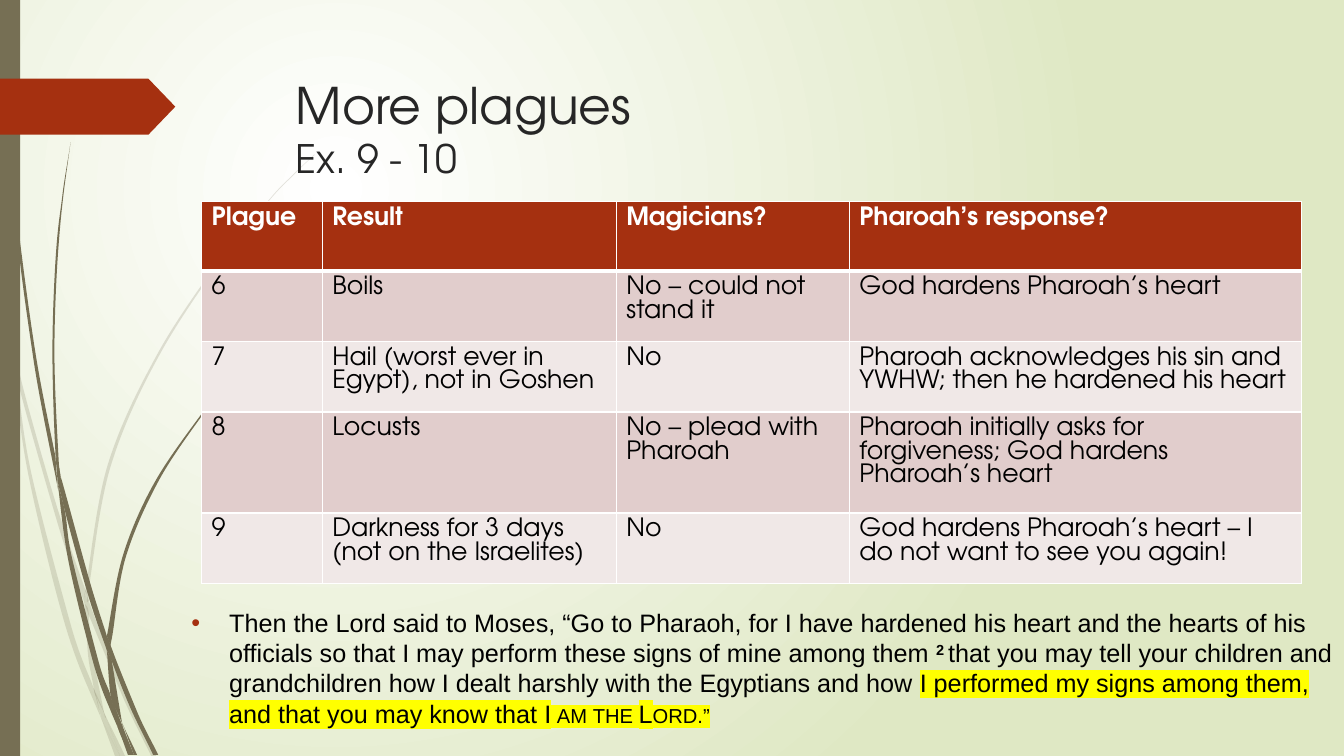
from lxml import etree
from pptx import Presentation
from pptx.dml.color import RGBColor
from pptx.enum.shapes import MSO_SHAPE
from pptx.oxml.ns import qn
from pptx.util import Pt

RECT, TAG = MSO_SHAPE.RECTANGLE, MSO_SHAPE.PENTAGON
COLOR = {"stem": "766F54", "red": "A53010", "title": "262626", "black": "000000",
         "white": "FFFFFF", "green": "DFE8C4", "dark": "E1CDCC", "pale": "F0E8E7",
         "mark": "FFFF00"}
HEAD_FONT, BODY_FONT = "TeX Gyre Adventor", "Arial"

TITLE = [("More plagues", 36), ("Ex. 9 - 10", 28)]
ROWS = [
    ("Plague", "Result", "Magicians?", "Pharoah’s response?"),
    ("6", "Boils", "No – could not stand it", "God hardens Pharoah’s heart"),
    ("7", "Hail (worst ever in Egypt), not in Goshen", "No",
     "Pharoah acknowledges his sin and YWHW; then he hardened his heart"),
    ("8", "Locusts", "No – plead with Pharoah",
     "Pharoah initially asks for forgiveness; God hardens Pharoah’s heart"),
    ("9", "Darkness for 3 days (not on the Israelites)", "No",
     "God hardens Pharoah’s heart – I do not want to see you again!"),
]
COLS = [86.2, 210, 166.5, 322.8]
HIGH = [49.5, 41, 41, 57.5, 40.5]
# Verse runs: text and style
VERSE = [
    ("Then the\u00a0Lord\u00a0said to Moses, “Go to Pharaoh, for I have hardened his heart\u00a0"
     "and the hearts of his officials so that I may perform these signs\u00a0of mine among them\u00a0",
     ""),
    ("2\u00a0", "super"),
    ("that you may tell your children\u00a0and grandchildren how I dealt harshly\u00a0"
     "with the Egyptians and how ", ""),
    ("I performed my signs among them, and that you may know that ", "mark"),
    ("I am the\u00a0Lord.”", "mark small"),
]

# Grass blades: the two edges of each, on a grid of 0.72 pt
UNIT = 0.72
FAINT = [
    ([(11, 350), (9, 322), (0, 282)], [(0, 299), (10, 344), (11, 350)]),
    ([(14, 345), (28, 404), (62, 520), (85, 586)], [(84, 599), (58, 522), (17, 376), (14, 345)]),
    ([(88, 596), (92, 607), (127, 692), (155, 750)], [(150, 750), (123, 694), (88, 610)]),
    ([(105, 711), (124, 750)], [(119, 750), (105, 711)]),
    ([(11, 350), (17, 376), (31, 469), (70, 619), (93, 683), (99, 707), (101, 714)],
     [(92, 693), (65, 621), (28, 470), (11, 350)]),
    ([(84, 599), (88, 608), (91, 646), (103, 706), (105, 711)],
     [(96, 692), (93, 683), (87, 646), (84, 599)]),
    ([(88, 596), (88, 584), (110, 462), (160, 349), (229, 245), (268, 198), (290, 175), (312, 154)],
     [(312, 153), (289, 175), (268, 197), (228, 244), (158, 348), (107, 461), (85, 584), (85, 586)]),
    ([(101, 714), (114, 750)], [(119, 750), (101, 714)]),
    ([(85, 586), (88, 596), (88, 610)], [(84, 599), (85, 586)]),
    ([(93, 683), (105, 711), (119, 750)], [(101, 714), (93, 683)]),
]
SOLID = [
    ([(3, 0), (4, 48), (7, 110), (17, 233), (33, 355), (56, 477), (57, 481)],
     [(55, 453), (36, 355), (19, 232), (8, 109), (5, 48), (4, 0)]),
    ([(60, 472), (64, 505), (88, 592), (106, 645)], [(106, 631), (93, 590), (60, 472)]),
    ([(110, 641), (113, 649), (136, 706), (157, 749)], [(152, 749), (132, 708), (111, 656), (110, 641)]),
    ([(57, 477), (64, 505), (72, 556), (98, 657), (110, 691), (117, 722)],
     [(111, 708), (93, 659), (68, 557), (57, 477)]),
    ([(70, 141), (63, 193), (58, 245), (54, 349), (58, 453), (60, 472)],
     [(55, 449), (52, 349), (56, 245), (62, 193), (70, 141)]),
    ([(122, 719), (136, 749)], [(133, 749), (122, 719)]),
    ([(55, 449), (60, 472), (64, 505)], [(57, 477), (55, 449)]),
    ([(110, 641), (111, 633), (125, 552), (158, 476), (205, 406), (231, 374), (261, 344)],
     [(260, 344), (231, 373), (204, 405), (156, 474), (122, 551), (106, 631)]),
    ([(117, 722), (127, 749)], [(131, 749), (117, 722)]),
    ([(106, 645), (109, 651), (111, 656), (121, 716), (122, 719)], [(116, 706), (110, 691), (106, 645)]),
    ([(106, 631), (110, 641), (111, 656)], [(106, 645), (106, 631)]),
    ([(110, 691), (116, 706), (133, 749)], [(130, 749), (117, 722), (110, 691)]),
]


def rgb(name):
    return RGBColor.from_string(COLOR[name])


def sub(node, tag, **attrs):
    return etree.SubElement(node, qn(tag), attrs)


def paint(shape, name):
    shape.fill.solid()
    shape.fill.fore_color.rgb = rgb(name)
    shape.line.fill.background()
    shape.shadow.inherit = False


def bend(shape, left, right):
    """Turn the straight pieces of both edges into smooth curves."""
    x0, y0 = (min(axis) for axis in zip(*left, *right))
    lines = iter(list(shape._element.spPr.iter(qn("a:lnTo"))))
    for edge in (left, right):
        if edge is right:
            next(lines)
        pts = [edge[0], *edge, edge[-1]]
        for a, b, c, d in zip(pts, pts[1:], pts[2:], pts[3:]):
            line = next(lines)
            curve = etree.Element(qn("a:cubicBezTo"))
            near = [q + (r - p) / 6 for p, q, r in zip(a, b, c)]
            far = [q - (r - p) / 6 for p, q, r in zip(b, c, d)]
            for x, y in (near, far, c):
                sub(curve, "a:pt", x=str(round(x - x0)), y=str(round(y - y0)))
            line.getparent().replace(line, curve)


def style(run, size, font, name, bold=False):
    run.font.size, run.font.name, run.font.bold = Pt(size), font, bold
    run.font.color.rgb = rgb(name)


def text_box(x, y, w, h):
    frame = slide.shapes.add_textbox(Pt(x), Pt(y), Pt(w), Pt(h)).text_frame
    frame.word_wrap = True
    return frame.paragraphs[0]


deck = Presentation()
deck.slide_width, deck.slide_height = Pt(960), Pt(540)
slide = deck.slides.add_slide(deck.slide_layouts[6])

# Background glow
fill = slide.background.fill
fill.gradient()
for stop, name in zip(fill.gradient_stops, ("white", "green")):
    stop.color.rgb = rgb(name)
lin = next(slide.background._cSld.iter(qn("a:lin")))
glow = etree.Element(qn("a:path"), path="circle")
sub(glow, "a:fillToRect", l="50000", t="50000", r="100000", b="100000")
lin.getparent().replace(lin, glow)

# Grass
for blades, alpha in ((FAINT, 20), (SOLID, 100)):
    for left, right in blades:
        pen = slide.shapes.build_freeform(*left[0], scale=Pt(UNIT))
        pen.add_line_segments(left[1:] + right, close=True)
        blade = pen.convert_to_shape()
        bend(blade, left, right)
        paint(blade, "stem")
        if alpha < 100:
            tint = next(blade._element.spPr.iter(qn("a:srgbClr")))
            sub(tint, "a:alpha", val=str(alpha * 1000))

# Side strip and tag
paint(slide.shapes.add_shape(RECT, 0, 0, Pt(14.4), Pt(540)), "stem")
tag = slide.shapes.add_shape(TAG, 0, Pt(56.2), Pt(125.2), Pt(40))
tag.adjustments[0] = 0.48
paint(tag, "red")

# Title
para = text_box(204.2, 49.2, 702, 100.8)
para.text = "\v".join(text for text, size in TITLE)
for run, (text, size) in zip(para.runs, TITLE):
    style(run, size, HEAD_FONT, "title")

# Plague table
grid = slide.shapes.add_table(len(ROWS), len(COLS), Pt(144), Pt(144),
                              Pt(sum(COLS)), Pt(sum(HIGH))).table
for col, width in zip(grid.columns, COLS):
    col.width = Pt(width)
for r, (row, high) in enumerate(zip(ROWS, HIGH)):
    grid.rows[r].height = Pt(high)
    for c, text in enumerate(row):
        cell = grid.cell(r, c)
        for side in "LRTB":
            thick = 3 if (r, side) in ((0, "B"), (1, "T")) else 1
            line = sub(cell._tc.get_or_add_tcPr(), "a:ln" + side, w=str(Pt(thick)))
            sub(sub(line, "a:solidFill"), "a:srgbClr", val=COLOR["white"])
        cell.fill.solid()
        cell.fill.fore_color.rgb = rgb("red" if r == 0 else "dark" if r % 2 else "pale")
        para = cell.text_frame.paragraphs[0]
        para.text = text
        style(para.runs[0], 18, HEAD_FONT, "black" if r else "white", r == 0)

# Verse
para = text_box(129.6, 430.2, 830.4, 94.3)
para.space_before = Pt(10)
props = para._p.get_or_add_pPr()
props.set("marL", str(Pt(27)))
props.set("indent", str(Pt(-27)))
sub(sub(props, "a:buClr"), "a:srgbClr", val=COLOR["red"])
sub(props, "a:buFont", typeface=BODY_FONT)
sub(props, "a:buChar", char="•")
for text, kind in VERSE:
    run = para.add_run()
    run.text = text
    style(run, 18, BODY_FONT, "black", kind == "super")
    props = run._r.get_or_add_rPr()
    if kind == "super":
        props.set("baseline", "30000")
    if "small" in kind:
        props.set("cap", "small")
    if "mark" in kind:
        mark = etree.Element(qn("a:highlight"))
        sub(mark, "a:srgbClr", val=COLOR["mark"])
        props.find(qn("a:solidFill")).addnext(mark)

deck.save("out.pptx")
